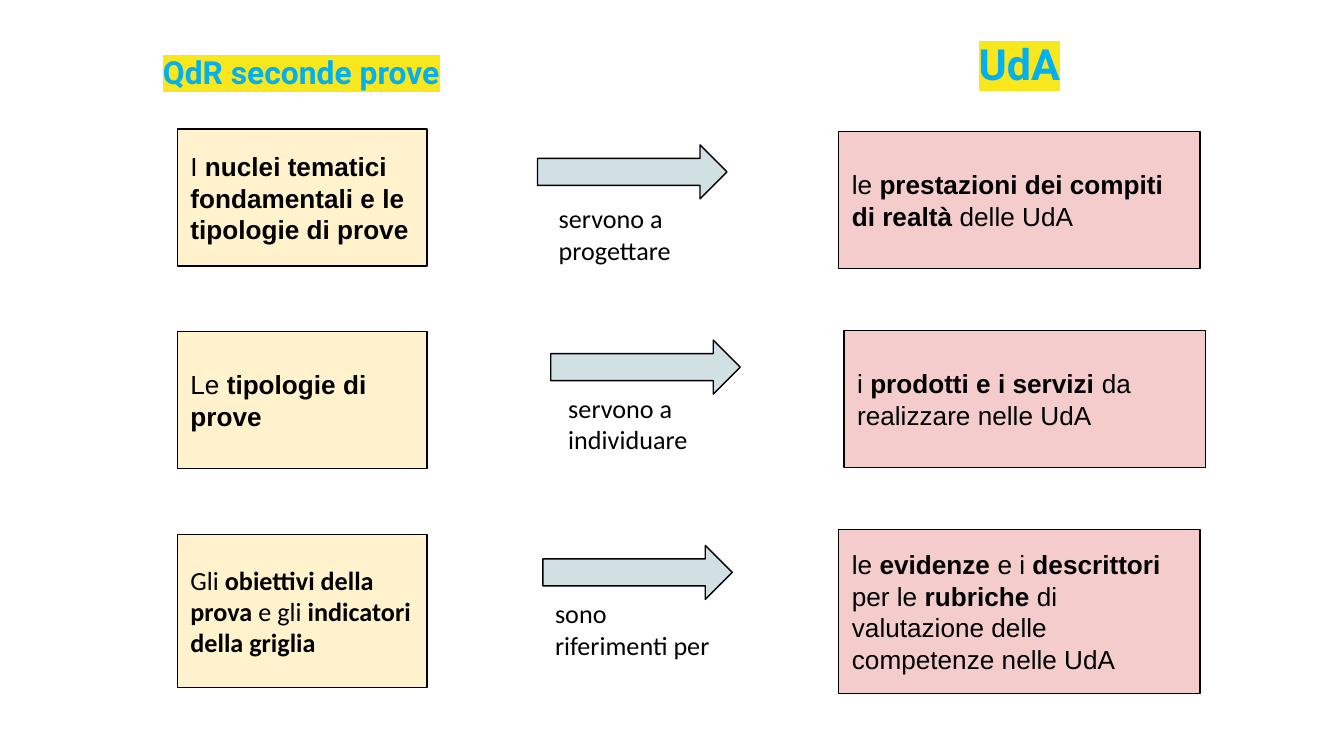
from lxml import etree
from pptx import Presentation
from pptx import util as u
from pptx.dml.color import RGBColor
from pptx.enum import shapes, text
from pptx.oxml import ns

COLORS = {
    "black": "000000",
    "cream": "FFF2CC",
    "pink": "F4CCCC",
    "grey_blue": "D0E0E3",
    "heading": "00B0F0",
    "highlight": "F8E71C",
}
INSET = u.Cm(0.25)
LEFT_TOP, LEFT_STEP = 2.44, 3.83
RIGHT_TOP, RIGHT_STEP = 2.49, 3.76

# Wording with bold parts between ** marks; positions in cm
ROWS = [
    {
        "left": ("I **nuclei tematici**\n**fondamentali e le tipologie di prove**", "Arial", 2.59),
        "arrow": (10.16, 2.74),
        "label": ("servono a progettare", 10.31, 3.58, 3.58),
        "right": ("le **prestazioni dei compiti di realtà **delle UdA", 15.85, 2.59),
    },
    {
        "left": ("Le** tipologie di prove**", "Arial", 2.59),
        "arrow": (10.41, 6.43),
        "label": ("servono a individuare", 10.49, 7.16, 3.02),
        "right": ("i **prodotti e i servizi** da realizzare nelle UdA", 15.95, 2.59),
    },
    {
        "left": ("Gli **obiettivi della prova** e gli** indicatori della griglia**", "Calibri", 2.9),
        "arrow": (10.26, 10.31),
        "label": ("sono riferimenti per", 10.24, 11.05, 3.58),
        "right": (
            "le **evidenze **e i **descrittori** per le **rubriche**"
            " di valutazione delle competenze nelle UdA", 15.85, 3.1),
    },
]


def color(name):
    return RGBColor.from_string(COLORS[name])


def write_text(shape, wording, font, size=14, font_color="black",
               align=text.PP_ALIGN.LEFT, anchor=text.MSO_ANCHOR.TOP):
    frame = shape.text_frame
    frame.word_wrap = True
    frame.vertical_anchor = anchor
    frame.margin_left = frame.margin_right = INSET
    frame.margin_top = frame.margin_bottom = INSET
    for index, line in enumerate(wording.split("\n")):
        paragraph = frame.add_paragraph() if index else frame.paragraphs[0]
        paragraph.alignment = align
        paragraph.font.name = font
        paragraph.font.size = u.Pt(size)
        paragraph.font.color.rgb = color(font_color)
        for position, part in enumerate(line.split("**")):
            if part:
                run = paragraph.add_run()
                run.text = part
                run.font.bold = position % 2 == 1


def add_filled_shape(slide, kind, left, top, width, height, fill):
    shape = slide.shapes.add_shape(
        kind, u.Cm(left), u.Cm(top), u.Cm(width), u.Cm(height))
    shape.shadow.inherit = False
    shape.fill.solid()
    shape.fill.fore_color.rgb = color(fill)
    shape.line.color.rgb = color("black")
    shape.line.width = u.Pt(0.75)
    return shape


def add_box(slide, wording, font, left, top, width, height, fill):
    box = add_filled_shape(slide, shapes.MSO_SHAPE.RECTANGLE,
                           left, top, width, height, fill)
    write_text(box, wording, font, anchor=text.MSO_ANCHOR.MIDDLE)


def add_arrow(slide, left, top):
    add_filled_shape(slide, shapes.MSO_SHAPE.RIGHT_ARROW,
                     left, top, 3.58, 1.02, "grey_blue")


def add_label(slide, wording, left, top, width):
    label = slide.shapes.add_textbox(u.Cm(left), u.Cm(top), u.Cm(width), u.Cm(1.7))
    write_text(label, wording, "Calibri")


def add_heading(slide, wording, size, left, top, width, height):
    heading = slide.shapes.add_textbox(
        u.Cm(left), u.Cm(top), u.Cm(width), u.Cm(height))
    write_text(heading, f"**{wording}**", "Roboto", size, "heading",
               text.PP_ALIGN.CENTER)
    # Text highlight needs XML
    run = heading.text_frame.paragraphs[0].runs[0]
    properties = run.font._element
    highlight = etree.SubElement(properties, ns.qn("a:highlight"))
    etree.SubElement(highlight, ns.qn("a:srgbClr"), val=COLORS["highlight"])


def main():
    presentation = Presentation()
    presentation.slide_width = u.Cm(25.4)
    presentation.slide_height = u.Cm(14.29)
    slide = presentation.slides.add_slide(presentation.slide_layouts[6])

    # Column headings
    add_heading(slide, "QdR seconde prove", 17, 2.67, 0.74, 6.05, 1.24)
    add_heading(slide, "UdA", 23, 16.56, 0.46, 5.41, 1.5)

    # One row per link between exam framework and learning unit
    for index, row in enumerate(ROWS):
        wording, font, height = row["left"]
        add_box(slide, wording, font, 3.35, LEFT_TOP + index * LEFT_STEP,
                4.72, height, "cream")
        add_arrow(slide, *row["arrow"])
        add_label(slide, *row["label"])
        wording, left, height = row["right"]
        add_box(slide, wording, "Arial", left, RIGHT_TOP + index * RIGHT_STEP,
                6.83, height, "pink")

    presentation.save("out.pptx")


if __name__ == "__main__":
    main()
